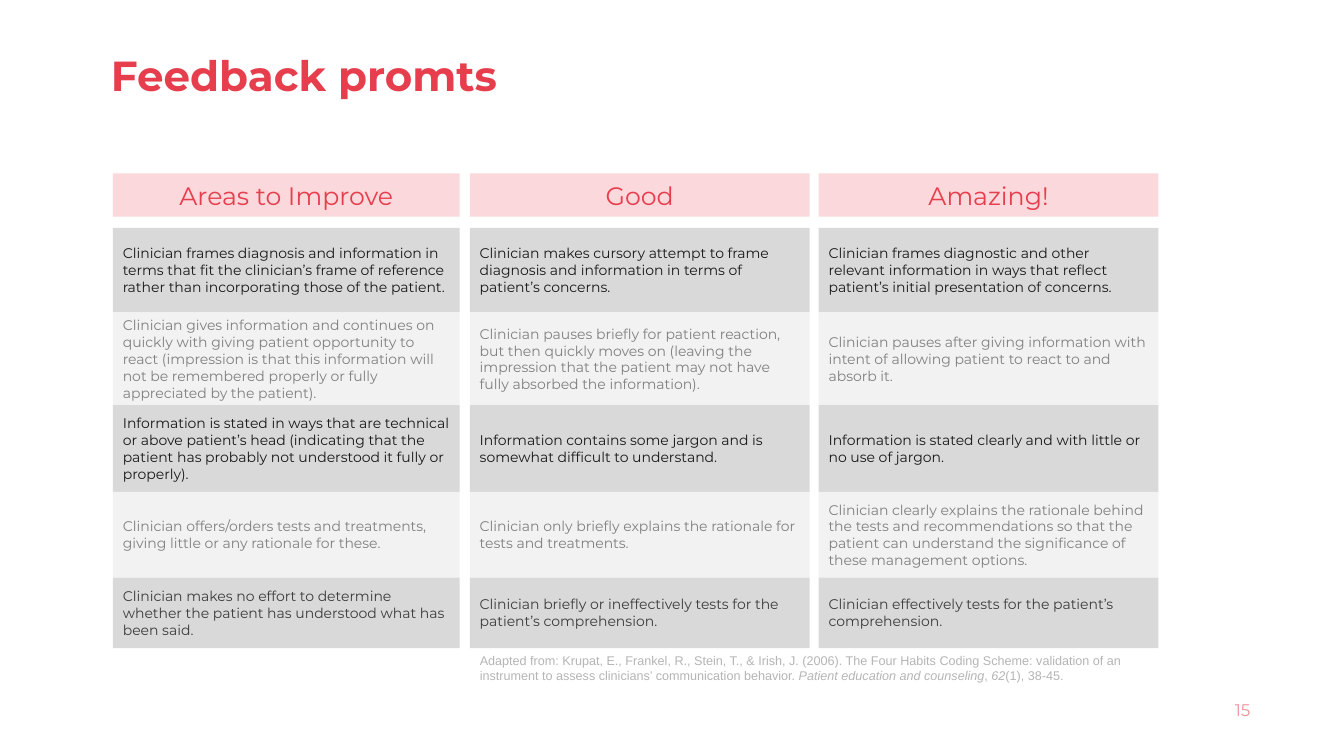
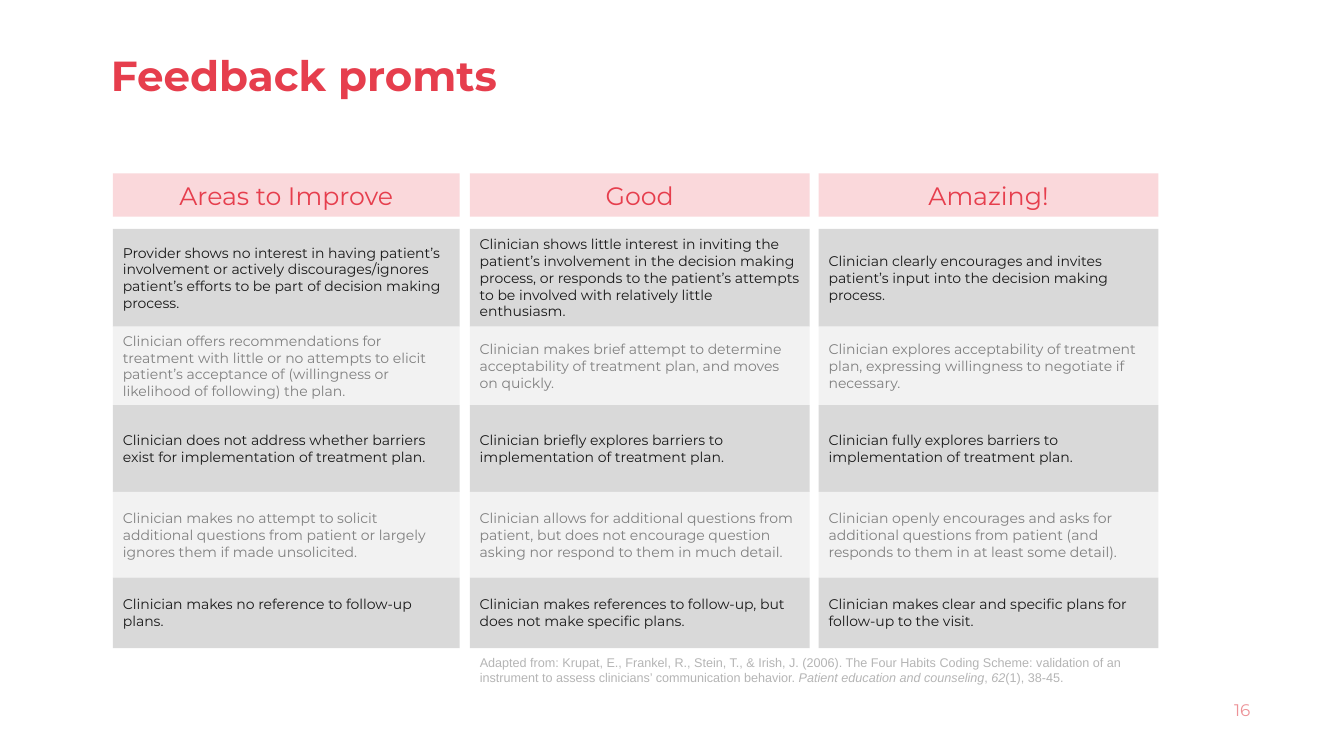
"""Build two slides of feedback prompts, each a grid of three columns and five rows."""
import pptx
import pptx.dml.color
import pptx.enum.shapes
import pptx.enum.text
import pptx.util

Inches = pptx.util.Inches
Pt = pptx.util.Pt
ALIGN = pptx.enum.text.PP_ALIGN
ANCHOR = pptx.enum.text.MSO_ANCHOR
RECT = pptx.enum.shapes.MSO_SHAPE.RECTANGLE

HUES = {
    "red": "E63E4D",
    "rose": "ED9297",
    "pink": "FAD8DB",
    "dark": "181818",
    "soft": "3C3C3C",
    "mid": "808080",
    "pale": "B5B5B5",
    "gray": "D9D9D9",
    "light": "F2F2F2",
}
FONTS = {
    "title": {"name": "Montserrat", "size": Pt(30), "bold": True},
    "head": {"name": "Montserrat", "size": Pt(18)},
    "cell": {"name": "Montserrat", "size": Pt(10)},
    "page": {"name": "Montserrat", "size": Pt(12)},
    "note": {"name": "Arial", "size": Pt(9)},
}
COLS = [(1.12, 3.44, "Areas to Improve"), (4.66, 3.37, "Good"), (8.12, 3.37, "Amazing!")]
ROWS = [("gray", "dark"), ("light", "mid")]
NOTE = [
    ("Adapted from: Krupat, E., Frankel, R., Stein, T., & Irish, J. (2006). The Four Habits Coding Scheme: "
     "validation of an instrument to assess clinicians’ communication behavior. ", False),
    ("Patient education and counseling", True),
    (", ", False),
    ("62", True),
    ("(1), 38-45.", False),
]
PAGES = [
    {
        "page": "15",
        "edges": [2.26, 3.1, 4.02, 4.88, 5.73, 6.43],
        "last": "soft",
        "note": 6.43,
        "rows": [
            ("Clinician frames diagnosis and information in terms that fit the clinician’s frame of reference "
             "rather than incorporating those of the patient.",
             "Clinician makes cursory attempt to frame diagnosis and information in terms of patient’s concerns.",
             "Clinician frames diagnostic and other relevant information in ways that reflect patient’s initial "
             "presentation of concerns."),
            ("Clinician gives information and continues on quickly with giving patient opportunity to react "
             "(impression is that this information will not be remembered properly or fully appreciated by the "
             "patient).",
             "Clinician pauses briefly for patient reaction, but then quickly moves on (leaving the impression "
             "that the patient may not have fully absorbed the information).",
             "Clinician pauses after giving information with intent of allowing patient to react to and absorb it."),
            ("Information is stated in ways that are technical or above patient’s head (indicating that the "
             "patient has probably not understood it fully or properly).",
             "Information contains some jargon and is somewhat difficult to understand.",
             "Information is stated clearly and with little or no use of jargon."),
            ("Clinician offers/orders tests and treatments, giving little or any rationale for these.",
             "Clinician only briefly explains the rationale for tests and treatments.",
             "Clinician clearly explains the rationale behind the tests and recommendations so that the patient "
             "can understand the significance of these management options."),
            ("Clinician makes no effort to determine whether the patient has understood what has been said.",
             "Clinician briefly or ineffectively tests for the patient’s comprehension.",
             "Clinician effectively tests for the patient’s comprehension."),
        ],
    },
    {
        "page": "16",
        "edges": [2.27, 3.24, 4.02, 4.88, 5.73, 6.43],
        "last": "dark",
        "note": 6.45,
        "rows": [
            ("Provider shows no interest in having patient’s involvement or actively discourages/ignores "
             "patient’s efforts to be part of decision making process.",
             "Clinician shows little interest in inviting the patient’s involvement in the decision making "
             "process, or responds to the patient’s attempts to be involved with relatively little enthusiasm.",
             "Clinician clearly encourages and invites patient’s input into the decision making process."),
            ("Clinician offers recommendations for treatment with little or no attempts to elicit patient’s "
             "acceptance of (willingness or likelihood of following) the plan.",
             "Clinician makes brief attempt to determine acceptability of treatment plan, and moves on quickly.",
             "Clinician explores acceptability of treatment plan, expressing willingness to negotiate if "
             "necessary."),
            ("Clinician does not address whether barriers exist for implementation of treatment plan.",
             "Clinician briefly explores barriers to implementation of treatment plan.",
             "Clinician fully explores barriers to implementation of treatment plan."),
            ("Clinician makes no attempt to solicit additional questions from patient or largely ignores them "
             "if made unsolicited.",
             "Clinician allows for additional questions from patient, but does not encourage question asking "
             "nor respond to them in much detail.",
             "Clinician openly encourages and asks for additional questions from patient (and responds to them "
             "in at least some detail)."),
            ("Clinician makes no reference to follow-up plans.",
             "Clinician makes references to follow-up, but does not make specific plans.",
             "Clinician makes clear and specific plans for follow-up to the visit."),
        ],
    },
]


def write(shape, runs, style, hue, align=ALIGN.LEFT, anchor=ANCHOR.MIDDLE):
    """Fill the shape with one paragraph of (text, italic) runs."""
    frame = shape.text_frame
    frame.word_wrap = True
    frame.auto_size = pptx.enum.text.MSO_AUTO_SIZE.NONE
    frame.vertical_anchor = anchor
    para = frame.paragraphs[0]
    para.alignment = align
    for text, slant in runs:
        run = para.add_run()
        run.text = text
        for key, value in FONTS[style].items():
            setattr(run.font, key, value)
        run.font.italic = slant
        run.font.color.rgb = pptx.dml.color.RGBColor.from_string(HUES[hue])
    return para


def block(slide, left, top, width, height, fill):
    """Add a plain filled rectangle."""
    shape = slide.shapes.add_shape(RECT, Inches(left), Inches(top), Inches(width), Inches(height))
    shape.shadow.inherit = False
    shape.fill.solid()
    shape.fill.fore_color.rgb = pptx.dml.color.RGBColor.from_string(HUES[fill])
    shape.line.fill.background()
    return shape


deck = pptx.Presentation()
deck.slide_width = Inches(13.33)
deck.slide_height = Inches(7.5)

for page in PAGES:
    slide = deck.slides.add_slide(deck.slide_layouts[5])
    title = slide.shapes.title
    place = {"left": 1, "top": 0.46, "width": 11.5, "height": 0.63}
    for key, value in place.items():
        setattr(title, key, Inches(value))
    write(title, [("Feedback promts", False)], "title", "red").line_spacing = 0.9

    edges = page["edges"]
    for col, (left, width, head) in enumerate(COLS):
        band = block(slide, left, 1.72, width, 0.43, "pink")
        write(band, [(head, False)], "head", "red", ALIGN.CENTER)
        for row, texts in enumerate(page["rows"]):
            fill, hue = ROWS[row % 2]
            if row == len(page["rows"]) - 1:
                hue = page["last"]
            cell = block(slide, left, edges[row], width, edges[row + 1] - edges[row], fill)
            write(cell, [(texts[col], False)], "cell", hue)

    note = slide.shapes.add_textbox(Inches(4.66), Inches(page["note"]), Inches(7.05), Inches(0.4))
    write(note, NOTE, "note", "pale", anchor=ANCHOR.TOP)
    num = slide.shapes.add_textbox(Inches(9.5), Inches(6.84), Inches(3), Inches(0.4))
    write(num, [(page["page"], False)], "page", "rose", ALIGN.RIGHT)

deck.save("out.pptx")
